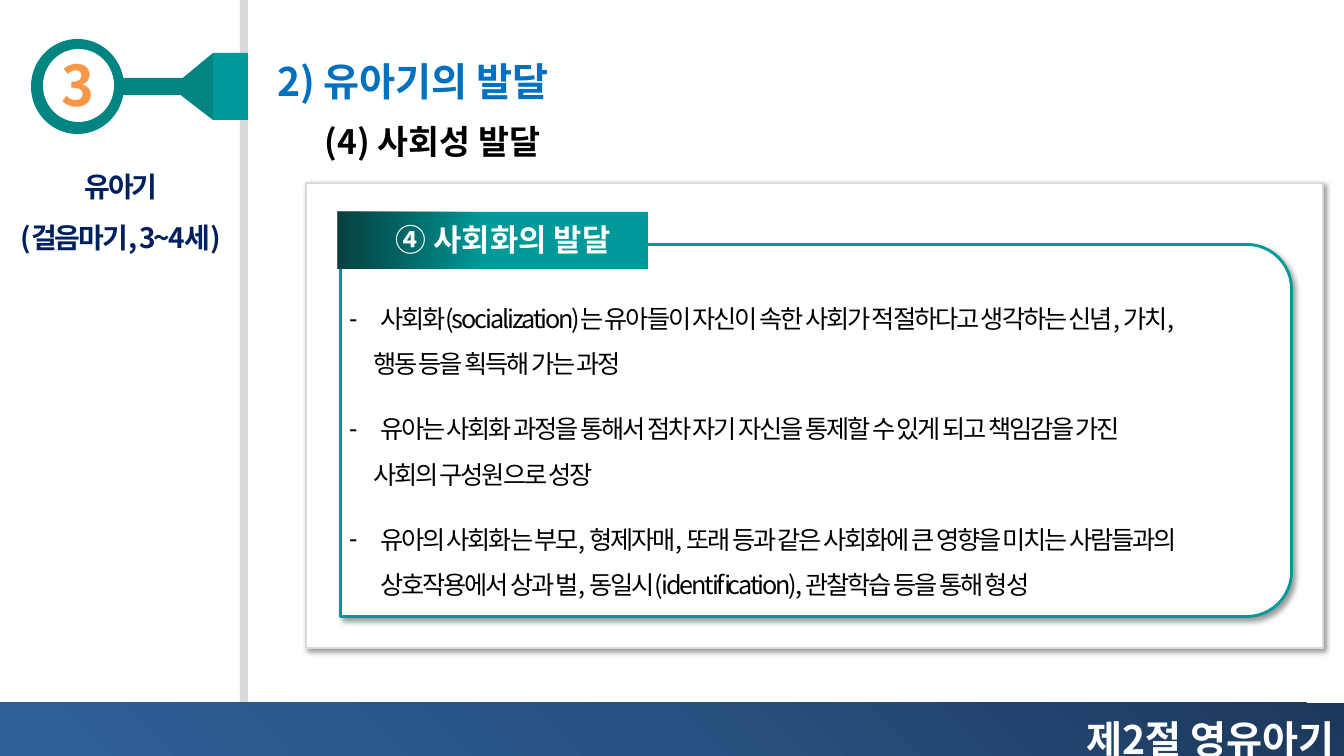
"""Builds the slide on socialization in early childhood."""
import pptx
import pptx.util
import pptx.dml.color
import pptx.enum.shapes
import pptx.enum.text
import pptx.oxml
import pptx.oxml.ns
from lxml import etree

EMU_PER_PX = 914400 / 100.8
THEME = {
    "font": "Noto Sans CJK KR",
    "white": "FFFFFF", "black": "000000", "grey": "D9D9D9",
    "teal": "009999", "deep_teal": "008582", "orange": "F79646",
    "navy": "002060", "blue": "0070C0",
    "number": 40, "heading": 28, "subheading": 24, "label": 22, "sidebar": 20, "body": 18,
    "band_gradient": (135, [(0, "1C395B", 100), (50, "285181", 100), (100, "306099", 100)]),
    "shade_gradient": (0, [(0, "0D0D0D", 64), (100, "000000", 0)]),
}
SHAPE = pptx.enum.shapes.MSO_SHAPE
ALIGN = pptx.enum.text.PP_ALIGN
RGB = pptx.dml.color.RGBColor.from_string
NAMESPACE = pptx.oxml.ns.nsdecls("a")


def px(*lengths):
    return [pptx.util.Emu(round(length * EMU_PER_PX)) for length in lengths]


def style(paragraph, size, color, bold=True, align=ALIGN.LEFT, spacing=1.0, tracking=0):
    paragraph.alignment = align
    paragraph.line_spacing = spacing
    paragraph.font.size = pptx.util.Pt(THEME[size])
    paragraph.font.bold = bold
    paragraph.font.name = THEME["font"]
    paragraph.font.color.rgb = RGB(THEME[color])
    properties = paragraph._p.pPr.find(pptx.oxml.ns.qn("a:defRPr"))
    properties.set("spc", str(round(tracking * 100)))
    east_asian = etree.SubElement(properties, pptx.oxml.ns.qn("a:ea"))
    east_asian.set("typeface", THEME["font"])


presentation = pptx.Presentation()
presentation.slide_width, presentation.slide_height = px(1344, 756)
slide = presentation.slides.add_slide(presentation.slide_layouts[1])
title, body = slide.placeholders

flag_builder = slide.shapes.build_freeform(178, 82, scale=EMU_PER_PX)
flag_builder.add_line_segments([(213, 53), (213, 120), (178, 93)], close=True)
flag = flag_builder.convert_to_shape()
flag.shadow.inherit = False
flag.fill.solid()
flag.fill.fore_color.rgb = RGB(THEME["deep_teal"])
flag.line.fill.background()

for kind, box, fill in [
    (SHAPE.RECTANGLE, (240, 0, 8, 712), "grey"),
    (SHAPE.OVAL, (31, 39, 93, 95), "deep_teal"),
    (SHAPE.OVAL, (43, 49, 71, 73), "white"),
    (SHAPE.RECTANGLE, (213, 53, 35, 67), "teal"),
    (SHAPE.RECTANGLE, (118, 78, 78, 17), "deep_teal"),
    (SHAPE.RECTANGLE, (338, 212, 310, 57), "teal"),
]:
    shape = slide.shapes.add_shape(kind, *px(*box))
    shape.shadow.inherit = False
    shape.fill.solid()
    shape.fill.fore_color.rgb = RGB(THEME[fill])
    shape.line.fill.background()
label_bar = shape

for box, gradient in [
    ((0, 703, 1344, 53), "band_gradient"),
    ((337, 212, 146, 57), "shade_gradient"),
]:
    shape = slide.shapes.add_shape(SHAPE.RECTANGLE, *px(*box))
    shape.shadow.inherit = False
    shape.line.fill.background()
    angle, stops = THEME[gradient]
    stop_xml = "".join(
        f'<a:gs pos="{position * 1000}"><a:srgbClr val="{color}">'
        f'<a:alpha val="{opacity * 1000}"/></a:srgbClr></a:gs>'
        for position, color, opacity in stops
    )
    shape.element.spPr.insert(2, pptx.oxml.parse_xml(
        f'<a:gradFill {NAMESPACE} rotWithShape="1"><a:gsLst>{stop_xml}</a:gsLst>'
        f'<a:lin ang="{angle * 60000}" scaled="0"/></a:gradFill>'
    ))

for kind, box, outline, rotation in [
    (SHAPE.RECTANGLE, (306, 183, 1017, 465), "grey", 0),
    (SHAPE.ROUND_2_SAME_RECTANGLE, (630, -45, 372, 951), "teal", 90),
]:
    card = slide.shapes.add_shape(kind, *px(*box))
    card.rotation = rotation
    if rotation:
        card.adjustments[0] = 0.12
        card.adjustments[1] = 0
    card.fill.solid()
    card.fill.fore_color.rgb = RGB(THEME["white"])
    card.line.color.rgb = RGB(THEME[outline])
    card.line.width = pptx.util.Pt(2)
    card.shadow.inherit = False
    card.element.spPr.find(pptx.oxml.ns.qn("a:effectLst")).append(pptx.oxml.parse_xml(
        f'<a:outerShdw {NAMESPACE} blurRad="50800" dist="38100" dir="2700000" algn="tl" '
        f'rotWithShape="0"><a:srgbClr val="{THEME["black"]}"><a:alpha val="40000"/>'
        '</a:srgbClr></a:outerShdw>'
    ))

tree = slide.shapes.element
for front_shape in (label_bar, shape, body):
    tree.append(front_shape.element)

title.left, title.top, title.width, title.height = px(267, 52, 323, 57)
body.left, body.top, body.width, body.height = px(339, 283, 944, 326)
for placeholder in (title, body):
    placeholder.text_frame.auto_size = pptx.enum.text.MSO_AUTO_SIZE.NONE
    placeholder.text_frame.vertical_anchor = pptx.enum.text.MSO_ANCHOR.TOP
    placeholder.text_frame.word_wrap = placeholder is body
title.text_frame.text = "2) 유아기의 발달"
style(title.text_frame.paragraphs[0], "heading", "blue")

for box, lines, wrap, look in [
    ((52, 46, 53, 78), ["3"], False,
     {"size": "number", "color": "orange", "align": ALIGN.CENTER}),
    ((648, 687, 696, 82), ["제2절 영유아기"], True,
     {"size": "heading", "color": "white", "align": ALIGN.RIGHT, "spacing": 1.5}),
    ((-1, 148, 244, 106), ["유아기", "(걸음마기, 3~4세)"], True,
     {"size": "sidebar", "color": "navy", "align": ALIGN.CENTER, "spacing": 1.5, "tracking": -1.5}),
    ((315, 116, 258, 50), ["(4) 사회성 발달"], False,
     {"size": "subheading", "color": "black"}),
    ((386, 216, 260, 47), ["④ 사회화의 발달"], False,
     {"size": "label", "color": "white"}),
]:
    text_box = slide.shapes.add_textbox(*px(*box))
    text_box.text_frame.word_wrap = wrap
    text_box.text_frame.text = "\n".join(lines)
    for paragraph in text_box.text_frame.paragraphs:
        style(paragraph, **look)

points = [
    ("사회화(socialization)는 유아들이 자신이 속한 사회가 적절하다고 생각하는 신념, 가치,", True),
    ("행동 등을 획득해 가는 과정", False),
    ("유아는 사회화 과정을 통해서 점차 자기 자신을 통제할 수 있게 되고 책임감을 가진", True),
    ("사회의 구성원으로 성장", False),
    ("유아의 사회화는 부모, 형제자매, 또래 등과 같은 사회화에 큰 영향을 미치는 사람들과의 "
     "상호작용에서 상과 벌, 동일시(identification), 관찰학습 등을 통해 형성", True),
]
body.text_frame.text = "\n".join(text for text, bulleted in points)
bullet_indent, continuation_indent = px(31, 24)
for index, (paragraph, (text, bulleted)) in enumerate(zip(body.text_frame.paragraphs, points)):
    properties = paragraph._p.get_or_add_pPr()
    properties.set("marL", str(bullet_indent if bulleted else continuation_indent))
    properties.set("indent", str(-bullet_indent if bulleted else 0))
    if bulleted:
        etree.SubElement(properties, pptx.oxml.ns.qn("a:buChar")).set("char", "-")
    else:
        etree.SubElement(properties, pptx.oxml.ns.qn("a:buNone"))
    paragraph.space_before = pptx.util.Pt(14 if bulleted and index else 0)
    style(paragraph, "body", "black", bold=False, spacing=1.5, tracking=-1.5)

presentation.save("out.pptx")
